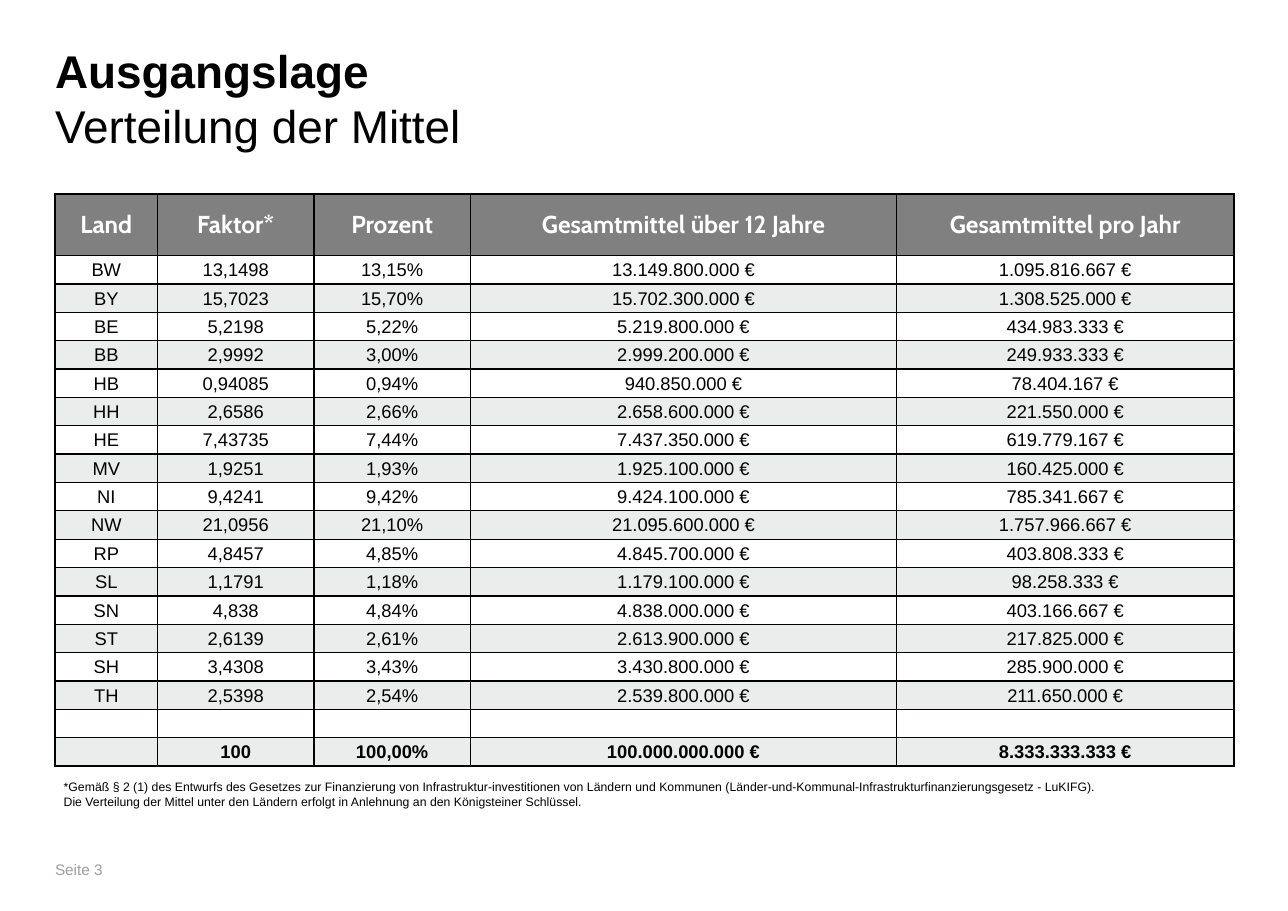
"""Build the slide on how the funds are distributed among the Länder."""
from typing import Any, NamedTuple

from lxml.etree import SubElement
from pptx import Presentation
from pptx.dml.color import RGBColor
from pptx.enum.text import MSO_ANCHOR as Anchor, PP_ALIGN as Align
from pptx.oxml.ns import qn
from pptx.util import Inches, Pt


class Share(NamedTuple):
    land: str
    faktor: str
    prozent: str
    gesamt: str
    pro_jahr: str


class Style(NamedTuple):
    size: float
    color: str = "000000"
    bold: bool = False
    name: str = "Arial"


class Box(NamedTuple):
    left: float
    top: float
    width: float
    height: float


HEADINGS = Share("Land", "Faktor*", "Prozent", "Gesamtmittel über 12 Jahre", "Gesamtmittel pro Jahr")
SHARES = [
    Share("BW", "13,1498", "13,15%", "13.149.800.000 €", "1.095.816.667 €"),
    Share("BY", "15,7023", "15,70%", "15.702.300.000 €", "1.308.525.000 €"),
    Share("BE", "5,2198", "5,22%", "5.219.800.000 €", "434.983.333 €"),
    Share("BB", "2,9992", "3,00%", "2.999.200.000 €", "249.933.333 €"),
    Share("HB", "0,94085", "0,94%", "940.850.000 €", "78.404.167 €"),
    Share("HH", "2,6586", "2,66%", "2.658.600.000 €", "221.550.000 €"),
    Share("HE", "7,43735", "7,44%", "7.437.350.000 €", "619.779.167 €"),
    Share("MV", "1,9251", "1,93%", "1.925.100.000 €", "160.425.000 €"),
    Share("NI", "9,4241", "9,42%", "9.424.100.000 €", "785.341.667 €"),
    Share("NW", "21,0956", "21,10%", "21.095.600.000 €", "1.757.966.667 €"),
    Share("RP", "4,8457", "4,85%", "4.845.700.000 €", "403.808.333 €"),
    Share("SL", "1,1791", "1,18%", "1.179.100.000 €", "98.258.333 €"),
    Share("SN", "4,838", "4,84%", "4.838.000.000 €", "403.166.667 €"),
    Share("ST", "2,6139", "2,61%", "2.613.900.000 €", "217.825.000 €"),
    Share("SH", "3,4308", "3,43%", "3.430.800.000 €", "285.900.000 €"),
    Share("TH", "2,5398", "2,54%", "2.539.800.000 €", "211.650.000 €"),
    Share("", "", "", "", ""),
    Share("", "100", "100,00%", "100.000.000.000 €", "8.333.333.333 €"),
]
FOOTNOTE = (
    "*Gemäß § 2 (1) des Entwurfs des Gesetzes zur Finanzierung von Infrastruktur-investitionen "
    "von Ländern und Kommunen (Länder-und-Kommunal-Infrastrukturfinanzierungsgesetz - LuKIFG). "
    "Die Verteilung der Mittel unter den Ländern erfolgt in Anlehnung an den Königsteiner Schlüssel."
)
TABLE_BOX = Box(0.5, 1.76, 10.7, 5.2)
COLUMN_WIDTHS = [0.93, 1.42, 1.42, 3.87, 3.06]
HEADING_HEIGHT = 0.56
SHARE_HEIGHT = (TABLE_BOX.height - HEADING_HEIGHT) / len(SHARES)
HEADING_STYLE = Style(16, "FFFFFF", True, "Cabin")
SHARE_STYLE = Style(12)
TOTAL_STYLE = Style(12, bold=True)
HEADING_FILL = "808080"
BAND_FILLS = ["FFFFFF", "EBECEC"]
CELL_FORMAT = {
    "margin_left": Inches(0.01),
    "margin_right": Inches(0.01),
    "margin_top": Inches(0.01),
    "margin_bottom": 0,
    "vertical_anchor": Anchor.MIDDLE,
}
FLUSH_FORMAT = dict.fromkeys(["margin_left", "margin_right", "margin_top", "margin_bottom"], 0)


def rgb(color: str) -> RGBColor:
    return RGBColor.from_string(color)


def apply_format(target: Any, values: dict[str, Any]) -> None:
    for attribute, value in values.items():
        setattr(target, attribute, value)


def add_words(paragraph: Any, words: str, style: Style) -> None:
    run = paragraph.add_run()
    run.text = words
    apply_format(run.font, {"size": Pt(style.size), "bold": style.bold, "name": style.name})
    run.font.color.rgb = rgb(style.color)


def add_frame(slide: Any, box: Box, values: dict[str, Any]) -> Any:
    frame = slide.shapes.add_textbox(*map(Inches, box)).text_frame
    apply_format(frame, {"word_wrap": True, **values})
    return frame


def add_borders(cell: Any) -> None:
    properties = cell._tc.get_or_add_tcPr()
    for side in ("lnL", "lnR", "lnT", "lnB"):
        border = SubElement(properties, qn(f"a:{side}"), w=str(Pt(1)))
        SubElement(SubElement(border, qn("a:solidFill")), qn("a:srgbClr"), val="000000")


def fill_cell(cell: Any, words: str, style: Style, fill: str) -> None:
    apply_format(cell, CELL_FORMAT)
    add_borders(cell)
    cell.fill.solid()
    cell.fill.fore_color.rgb = rgb(fill)
    paragraph = cell.text_frame.paragraphs[0]
    paragraph.alignment = Align.CENTER
    if words:
        add_words(paragraph, words, style)
    else:
        SubElement(paragraph._p, qn("a:endParaRPr"), sz=str(style.size * 100))


def add_share_table(slide: Any) -> None:
    lines = [HEADINGS, *SHARES]
    table = slide.shapes.add_table(len(lines), len(HEADINGS), *map(Inches, TABLE_BOX)).table
    for column, width in zip(table.columns, COLUMN_WIDTHS):
        column.width = Inches(width)
    for index, (row, line) in enumerate(zip(table.rows, lines)):
        row.height = Inches(SHARE_HEIGHT if index else HEADING_HEIGHT)
        style, fill = SHARE_STYLE, BAND_FILLS[(index - 1) % 2]
        if index == 0:
            style, fill = HEADING_STYLE, HEADING_FILL
        elif index == len(SHARES):
            style = TOTAL_STYLE
        for cell, words in zip(row.cells, line):
            fill_cell(cell, words, style, fill)


def main() -> None:
    deck = Presentation()
    apply_format(deck, {"slide_width": Inches(11.69), "slide_height": Inches(8.27)})
    slide = deck.slides.add_slide(deck.slide_layouts[6])

    heading = add_frame(slide, Box(0.5, 0.39, 10.69, 1.1), FLUSH_FORMAT).paragraphs[0]
    heading.line_spacing = Pt(36)
    add_words(heading, "Ausgangslage", Style(30, bold=True))
    heading.add_line_break()
    add_words(heading, "Verteilung der Mittel", Style(30))

    page_format = {**FLUSH_FORMAT, "vertical_anchor": Anchor.BOTTOM}
    page = add_frame(slide, Box(0.5, 7.78, 0.79, 0.2), page_format)
    add_words(page.paragraphs[0], "Seite 3", Style(10, "9C9E9F"))

    add_share_table(slide)
    footnote = add_frame(slide, Box(0.48, 7.03, 9.6, 0.37), {})
    add_words(footnote.paragraphs[0], FOOTNOTE, Style(8))
    deck.save("out.pptx")


if __name__ == "__main__":
    main()
